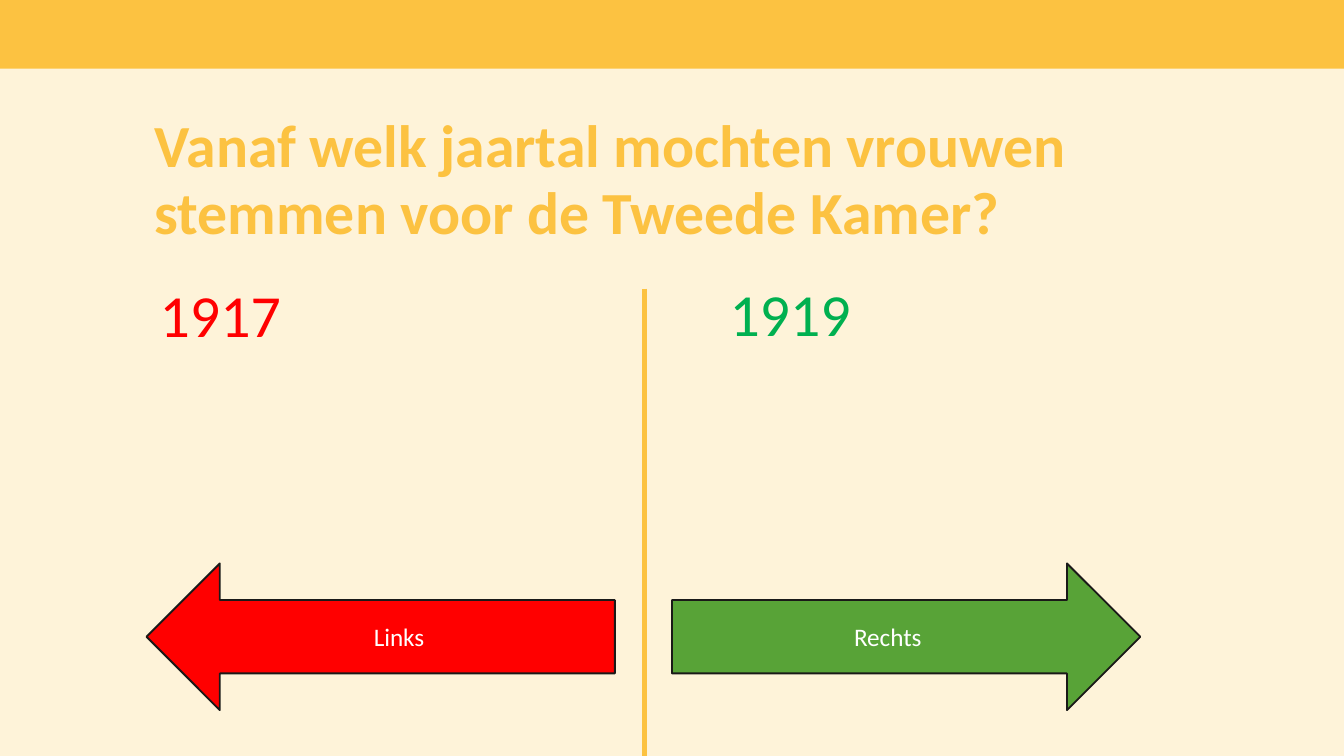
from lxml import etree
from pptx import Presentation
from pptx.dml.color import RGBColor
from pptx.enum.shapes import MSO_CONNECTOR, MSO_SHAPE
from pptx.enum.text import MSO_ANCHOR, PP_ALIGN
from pptx.oxml.ns import qn
from pptx.util import Inches, Pt

RECT, LEFT, RIGHT = MSO_SHAPE.RECTANGLE, MSO_SHAPE.LEFT_ARROW, MSO_SHAPE.RIGHT_ARROW
STRAIGHT = MSO_CONNECTOR.STRAIGHT
TOP, MIDDLE = MSO_ANCHOR.TOP, MSO_ANCHOR.MIDDLE
START, CENTER = PP_ALIGN.LEFT, PP_ALIGN.CENTER
WIDE = Inches(10)
HIGH = WIDE * 9 // 16
GOLD, CREAM, INK, WHITE = "FCC241", "FEF3D9", "1A1918", "FFFFFF"
ANSWERS = [
    ("1917", "FF0000", (10.9, 35.9, 29.5, 11.4)),
    ("1919", "00B050", (53.3, 35.8, 38.4, 11.4)),
]
ARROWS = [
    ("Links", LEFT, "FF0000", (10.9, 74.53, 34.85, 19.41)),
    ("Rechts", RIGHT, "58A337", (50, 74.53, 34.85, 19.41)),
]


def color(code):
    """Turn a hex string into a colour."""
    return RGBColor.from_string(code)


def place(box):
    """Turn percents of the slide's width and height into lengths."""
    return [round(part * side / 100) for part, side in zip(box, (WIDE, HIGH) * 2)]


def assign(item, values):
    """Set each attribute named in a dict."""
    for name, value in values.items():
        setattr(item, name, value)


def write(shape, text, size, code, bold=False, align=START, anchor=TOP, **frame):
    """Fill a shape with one formatted paragraph and return it."""
    body = shape.text_frame
    assign(body, {"word_wrap": True, "vertical_anchor": anchor, **frame})
    line = body.paragraphs[0]
    line.text, line.alignment = text, align
    assign(line.font, {"name": "Calibri", "size": Pt(size), "bold": bold})
    line.font.color.rgb = color(code)
    return line


def block(slide, kind, box, fill, edge=None):
    """Draw a flat preset shape in the box."""
    shape = slide.shapes.add_shape(kind, *place(box))
    shape.shadow.inherit = False
    shape.fill.solid()
    shape.fill.fore_color.rgb = color(fill)
    if edge:
        shape.line.color.rgb, shape.line.width = color(edge), Pt(1)
    else:
        shape.line.fill.background()
    return shape


def title(slide, text, box):
    """Place the question in the title placeholder."""
    shape = slide.shapes.title
    assign(shape, dict(zip(("left", "top", "width", "height"), place(box))))
    edges = {"margin_left": 0, "margin_right": 0, "margin_top": Inches(0.05), "margin_bottom": 0}
    line = write(shape, text, 32, GOLD, bold=True, **edges)
    line.line_spacing = Pt(36)


def divide(slide, left, top, end):
    """Draw the upright rule between the two answers."""
    rule = slide.shapes.add_connector(STRAIGHT, *place((left, top, left, end)))
    rule.line.color.rgb, rule.line.width = color(GOLD), Pt(3)
    etree.SubElement(rule._element.spPr, qn("a:effectLst"))


def answer(slide, text, code, box):
    """Write one answer in its box."""
    write(slide.shapes.add_textbox(*place(box)), text, 32, code)


def arrow(slide, text, kind, fill, box):
    """Draw a labelled arrow in its box."""
    shape = block(slide, kind, box, fill, INK)
    write(shape, text, 13.5, WHITE, align=CENTER, anchor=MIDDLE)


def main():
    """Build and save the quiz slide."""
    deck = Presentation()
    assign(deck, {"slide_width": WIDE, "slide_height": HIGH})
    slide = deck.slides.add_slide(deck.slide_layouts[5])
    slide.background.fill.solid()
    slide.background.fill.fore_color.rgb = color(CREAM)
    block(slide, RECT, (0, 0, 100, 9.1), GOLD)
    title(slide, "Vanaf welk jaartal mochten vrouwen stemmen voor de Tweede Kamer?",
          (11.5, 14, 71.6, 17.4))
    divide(slide, 47.95, 38.2, 100)
    for item in ANSWERS:
        answer(slide, *item)
    for item in ARROWS:
        arrow(slide, *item)
    deck.save("out.pptx")


if __name__ == "__main__":
    main()
